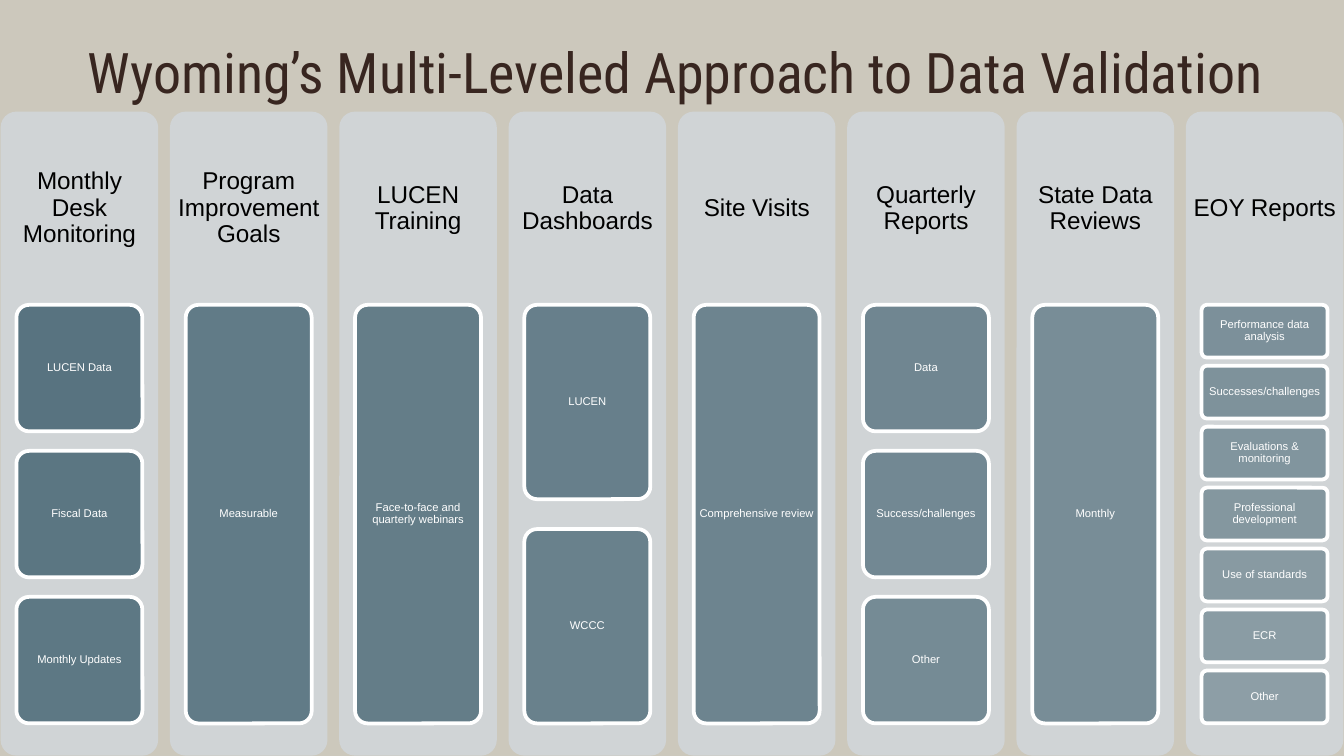
from dataclasses import dataclass

from lxml import etree
from pptx import Presentation
from pptx.dml.color import RGBColor
from pptx.enum.shapes import MSO_SHAPE
from pptx.enum.text import MSO_ANCHOR, PP_ALIGN
from pptx.oxml.ns import qn
from pptx.util import Pt

ROUNDED = MSO_SHAPE.ROUNDED_RECTANGLE
MIDDLE = MSO_ANCHOR.MIDDLE
CENTER, RIGHT = PP_ALIGN.CENTER, PP_ALIGN.RIGHT


@dataclass(frozen=True)
class Theme:
    background: str = "CCC8BC"
    panel: str = "D0D4D6"
    tile: str = "4B6977"
    outline: str = "FFFFFF"
    title_color: str = "382620"
    heading_color: str = "000000"
    tile_color: str = "FFFFFF"
    title_font: str = "Roboto Condensed"
    body_font: str = "Arial"
    title_size: float = 30
    heading_size: float = 13
    tile_size: float = 6


THEME = Theme()
TITLE = "Wyoming’s Multi-Leveled Approach to Data Validation"
LEVELS = [
    ("Monthly Desk Monitoring", ["LUCEN Data", "Fiscal Data", "Monthly Updates"]),
    ("Program Improvement Goals", ["Measurable"]),
    ("LUCEN Training", ["Face-to-face and quarterly webinars"]),
    ("Data Dashboards", ["LUCEN", "WCCC"]),
    ("Site Visits", ["Comprehensive review"]),
    ("Quarterly Reports", ["Data", "Success/challenges", "Other"]),
    ("State Data Reviews", ["Monthly"]),
    ("EOY Reports", ["Performance data analysis", "Successes/challenges",
                     "Evaluations & monitoring", "Professional development",
                     "Use of standards", "ECR", "Other"]),
]
PANEL_GAP = 0.075   # share of a panel's width
TILE_GAP = 0.154    # share of a tile's height
FIRST_OPACITY, LAST_OPACITY = 90, 50


def rgb(value):
    return RGBColor.from_string(value)


def write(shape, text, font, size, color, align, inset_x, inset_y, spacing=0.9):
    frame = shape.text_frame
    frame.word_wrap = True
    frame.vertical_anchor = MIDDLE
    frame.margin_left = frame.margin_right = Pt(inset_x)
    frame.margin_top = frame.margin_bottom = Pt(inset_y)
    frame.text = text
    paragraph = frame.paragraphs[0]
    paragraph.alignment = align
    paragraph.line_spacing = spacing
    run_font = paragraph.runs[0].font
    run_font.name, run_font.size = font, Pt(size)
    run_font.color.rgb = rgb(color)


def add_rounded(slide, box, fill):
    shape = slide.shapes.add_shape(ROUNDED, *map(Pt, box))
    shape.adjustments[0] = 0.1
    shape.shadow.inherit = False
    shape.fill.solid()
    shape.fill.fore_color.rgb = rgb(fill)
    shape.line.fill.background()
    return shape


def set_opacity(shape, percent):
    color = shape.fill._xPr.find(qn("a:solidFill"))[0]
    etree.SubElement(color, qn("a:alpha"), val=str(round(percent * 1000)))


def add_title(slide, box):
    title = slide.shapes.add_textbox(*map(Pt, box))
    write(title, TITLE, THEME.title_font, THEME.title_size, THEME.title_color,
          RIGHT, 7.2, 7.2, spacing=1)


def add_tile(slide, box, text, opacity):
    tile = add_rounded(slide, box, THEME.tile)
    set_opacity(tile, opacity)
    tile.line.color.rgb = rgb(THEME.outline)
    tile.line.width = Pt(2)
    write(tile, text, THEME.body_font, THEME.tile_size, THEME.tile_color,
          CENTER, 1, 0.9)


def add_level(slide, box, heading, items, opacities):
    """A panel: heading in the top 30 %, tiles sharing the next 65 %."""
    left, top, width, height = box
    add_rounded(slide, box, THEME.panel)
    heading_height = 0.3 * height
    label = slide.shapes.add_textbox(*map(Pt, (left, top, width, heading_height)))
    write(label, heading, THEME.body_font, THEME.heading_size,
          THEME.heading_color, CENTER, 3.6, 3.6)

    count = len(items)
    tile_height = 0.65 * height / (count + (count - 1) * TILE_GAP)
    for row, (item, opacity) in enumerate(zip(items, opacities)):
        tile_top = top + heading_height + row * tile_height * (1 + TILE_GAP)
        add_tile(slide, (left + 0.1 * width, tile_top, 0.8 * width, tile_height),
                 item, opacity)


def add_levels(slide, box):
    left, top, width, height = box
    count = len(LEVELS)
    panel_width = width / (count + (count - 1) * PANEL_GAP)
    total = sum(len(items) for _, items in LEVELS)
    step = (LAST_OPACITY - FIRST_OPACITY) / (total - 1)
    opacities = [FIRST_OPACITY + step * index for index in range(total)]
    start = 0
    for column, (heading, items) in enumerate(LEVELS):
        panel_left = left + column * panel_width * (1 + PANEL_GAP)
        add_level(slide, (panel_left, top, panel_width, height),
                  heading, items, opacities[start:start + len(items)])
        start += len(items)


def main():
    deck = Presentation()
    deck.slide_width, deck.slide_height = Pt(720), Pt(405)
    slide = deck.slides.add_slide(deck.slide_layouts[6])
    slide.background.fill.solid()
    slide.background.fill.fore_color.rgb = rgb(THEME.background)
    add_title(slide, (36, 16.5, 648, 43.3))
    add_levels(slide, (0.35, 59.8, 719.3, 345))
    deck.save("out.pptx")


if __name__ == "__main__":
    main()
